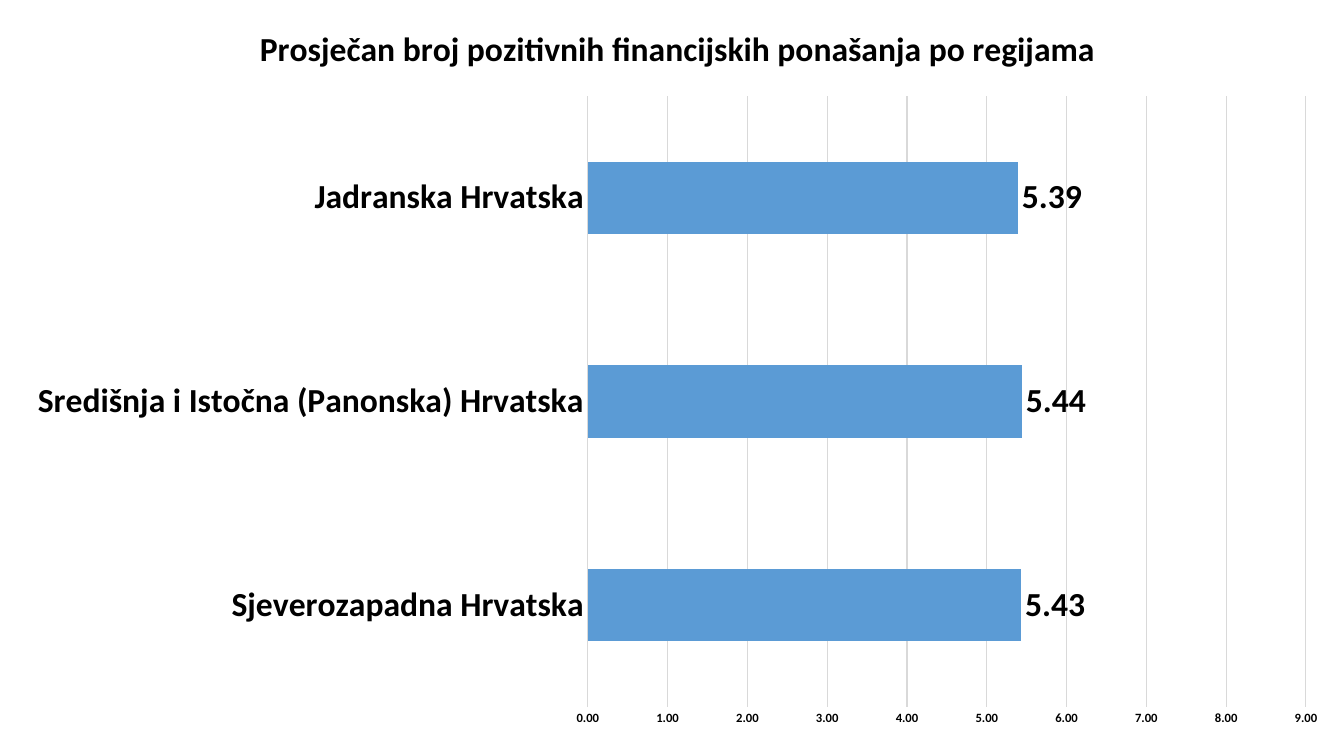
from dataclasses import dataclass

from pptx import Presentation
from pptx.chart.data import CategoryChartData
from pptx.dml.color import RGBColor
from pptx.enum.chart import XL_CHART_TYPE as ChartType
from pptx.enum.chart import XL_LABEL_POSITION as LabelPosition
from pptx.enum.chart import XL_TICK_MARK as TickMark
from pptx.text.text import Font
from pptx.util import Pt


@dataclass(frozen=True)
class Theme:
    font: str = "Calibri"
    ink: RGBColor = RGBColor(0x00, 0x00, 0x00)
    bar: RGBColor = RGBColor(0x5B, 0x9B, 0xD5)
    rule: RGBColor = RGBColor(0xD9, 0xD9, 0xD9)
    base_size: int = 12
    large_size: int = 24
    scale_size: int = 9
    rule_width: float = 0.75


@dataclass(frozen=True)
class Region:
    name: str
    behaviours: float


THEME = Theme()
HEADING = "Prosječan broj pozitivnih financijskih ponašanja po regijama"
NUMBER_FORMAT = "0.00"
REGIONS = (
    Region("Sjeverozapadna Hrvatska", 5.43),
    Region("Središnja i Istočna (Panonska) Hrvatska", 5.44),
    Region("Jadranska Hrvatska", 5.39),
)


def apply_format(target: object, values: dict[str, object]) -> None:
    for attribute, value in values.items():
        setattr(target, attribute, value)


def style_font(font: Font, size: int) -> None:
    apply_format(font, {"name": THEME.font, "size": Pt(size), "bold": True})
    font.color.rgb = THEME.ink


def style_rule(line: object) -> None:
    line.color.rgb = THEME.rule
    line.width = Pt(THEME.rule_width)


def main() -> None:
    deck = Presentation()
    apply_format(deck, {"slide_width": Pt(960), "slide_height": Pt(540)})
    slide = deck.slides.add_slide(deck.slide_layouts[6])

    # Regional averages
    averages = CategoryChartData(number_format=NUMBER_FORMAT)
    averages.categories = [region.name for region in REGIONS]
    averages.add_series("Series 1", [region.behaviours for region in REGIONS])
    chart = slide.shapes.add_chart(
        ChartType.BAR_CLUSTERED, Pt(8), Pt(0), Pt(952), Pt(529), averages
    ).chart
    chart.has_legend = False
    style_font(chart.font, THEME.base_size)

    # Heading
    heading = chart.chart_title
    heading.text_frame.text = HEADING
    heading.include_in_layout = False
    style_font(heading.text_frame.paragraphs[0].runs[0].font, THEME.large_size)

    # Bars and their values
    bars = chart.plots[0]
    apply_format(bars, {"gap_width": 182, "vary_by_categories": False,
                        "has_data_labels": True})
    bars.series[0].format.fill.solid()
    bars.series[0].format.fill.fore_color.rgb = THEME.bar
    apply_format(bars.data_labels, {
        "show_value": True,
        "number_format": NUMBER_FORMAT,
        "number_format_is_linked": False,
        "position": LabelPosition.OUTSIDE_END,
    })
    style_font(bars.data_labels.font, THEME.large_size)

    # Axes
    region_axis, scale = chart.category_axis, chart.value_axis
    for axis, size in ((region_axis, THEME.large_size), (scale, THEME.scale_size)):
        apply_format(axis, {"major_tick_mark": TickMark.NONE,
                            "minor_tick_mark": TickMark.NONE})
        style_font(axis.tick_labels.font, size)
    region_axis.has_major_gridlines = False
    style_rule(region_axis.format.line)

    apply_format(scale, {"minimum_scale": 0, "maximum_scale": 9, "major_unit": 1,
                         "has_major_gridlines": True})
    apply_format(scale.tick_labels, {"number_format": NUMBER_FORMAT,
                                     "number_format_is_linked": False})
    scale.format.line.fill.background()
    style_rule(scale.major_gridlines.format.line)

    deck.save("out.pptx")


if __name__ == "__main__":
    main()
